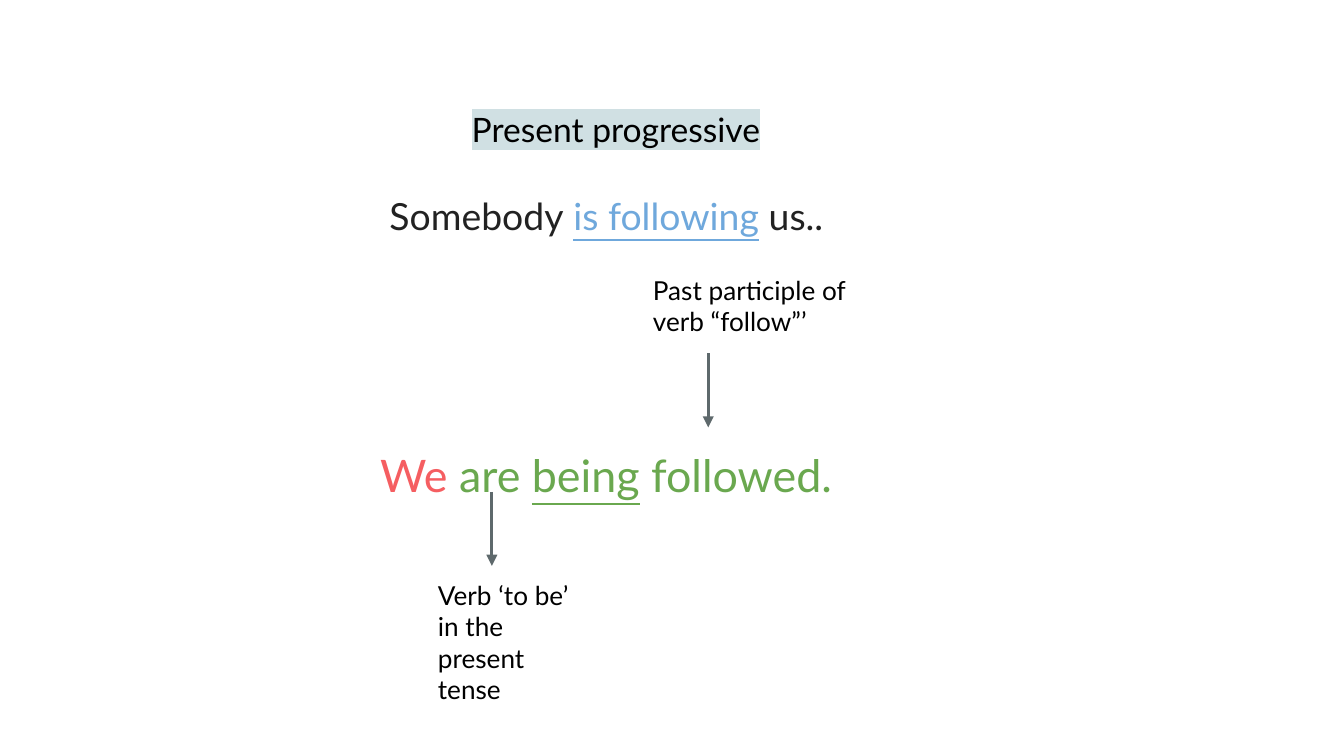
from dataclasses import dataclass

from lxml.etree import SubElement
from pptx import Presentation
from pptx.dml.color import RGBColor
from pptx.enum.shapes import MSO_CONNECTOR
from pptx.enum.text import MSO_ANCHOR, MSO_AUTO_SIZE, PP_ALIGN
from pptx.oxml import parse_xml
from pptx.oxml.ns import nsdecls, qn
from pptx.util import Inches, Pt

SLIDE_WIDTH = 10
SLIDE_HEIGHT = SLIDE_WIDTH * 9 / 16

BLACK, INK, GREY = "000000", "222222", "5E696C"
BLUE, RED, GREEN = "6FA8DC", "F55E61", "6AA84F"
WHITE, PALE_TEAL = "FFFFFF", "D0E0E3"


@dataclass
class Run:
    text: str
    color: str = BLACK
    underline: bool = False
    highlight: str = ""


@dataclass
class Block:
    left: float
    top: float
    width: float
    height: float
    size: int
    runs: list[Run]
    anchor: MSO_ANCHOR = MSO_ANCHOR.TOP


@dataclass
class Arrow:
    x: float
    top: float
    length: float = 0.55


HEADING = Block(3.41, 0.71, 2.44, 0.5, 18,
                [Run("Present progressive", highlight=PALE_TEAL)])

BLOCKS = [
    # Active sentence
    Block(2.8, 1.01, 3.67, 0.86, 20, [
        Run("Somebody", INK, highlight=WHITE),
        Run(" ", BLUE, highlight=WHITE),
        Run("is following", BLUE, True, WHITE),
        Run(" us..", INK, highlight=WHITE),
    ], MSO_ANCHOR.BOTTOM),
    # Passive sentence
    Block(2.73, 3.23, 4.25, 0.61, 24, [
        Run("We ", RED),
        Run("are ", GREEN),
        Run("being", GREEN, True),
        Run(" followed.", GREEN),
    ]),
    # Explanations
    Block(4.76, 1.94, 1.75, 0.67, 14, [Run("Past participle of verb “follow”’")]),
    Block(3.16, 4.21, 1.25, 1.14, 14, [Run("Verb ‘to be’ in the present tense")]),
]

ARROWS = [Arrow(5.27, 2.63), Arrow(3.66, 3.66)]


def rgb(value: str) -> RGBColor:
    return RGBColor.from_string(value)


def fill_block(shape, block: Block) -> None:
    """Place the shape and write its formatted runs."""
    for side in ("left", "top", "width", "height"):
        setattr(shape, side, Inches(getattr(block, side)))
    frame = shape.text_frame
    frame_format = {"word_wrap": True, "auto_size": MSO_AUTO_SIZE.NONE,
                    "vertical_anchor": block.anchor}
    frame_format |= {f"margin_{side}": Inches(0.1)
                     for side in ("left", "top", "right", "bottom")}
    for name, value in frame_format.items():
        setattr(frame, name, value)

    paragraph = frame.paragraphs[0]
    paragraph.alignment = PP_ALIGN.LEFT
    for part in block.runs:
        run = paragraph.add_run()
        run.text = part.text
        run.font.color.rgb = rgb(part.color)
        font_format = {"name": "Lato", "size": Pt(block.size),
                       "underline": part.underline}
        for name, value in font_format.items():
            setattr(run.font, name, value)
        if part.highlight:
            marker = parse_xml(f'<a:highlight {nsdecls("a")}>'
                               f'<a:srgbClr val="{part.highlight}"/></a:highlight>')
            run.font.fill._xPr.find(qn("a:solidFill")).addnext(marker)


def draw_arrow(slide, arrow: Arrow) -> None:
    """Draw a downward arrow without a shadow."""
    connector = slide.shapes.add_connector(
        MSO_CONNECTOR.STRAIGHT, Inches(arrow.x), Inches(arrow.top),
        Inches(arrow.x), Inches(arrow.top + arrow.length))
    connector.line.color.rgb = rgb(GREY)
    connector.line.width = Pt(1.5)
    SubElement(connector.line._get_or_add_ln(), qn("a:tailEnd"), type="triangle")
    SubElement(connector._element.spPr, qn("a:effectLst"))


def main() -> None:
    deck = Presentation()
    deck.slide_width, deck.slide_height = Inches(SLIDE_WIDTH), Inches(SLIDE_HEIGHT)
    slide = deck.slides.add_slide(deck.slide_layouts[5])

    # Heading in the title placeholder
    fill_block(slide.shapes.title, HEADING)

    # Sentences and explanations
    for block in BLOCKS:
        fill_block(slide.shapes.add_textbox(0, 0, 0, 0), block)

    # Arrows between sentence and explanations
    for arrow in ARROWS:
        draw_arrow(slide, arrow)

    deck.save("out.pptx")


if __name__ == "__main__":
    main()
